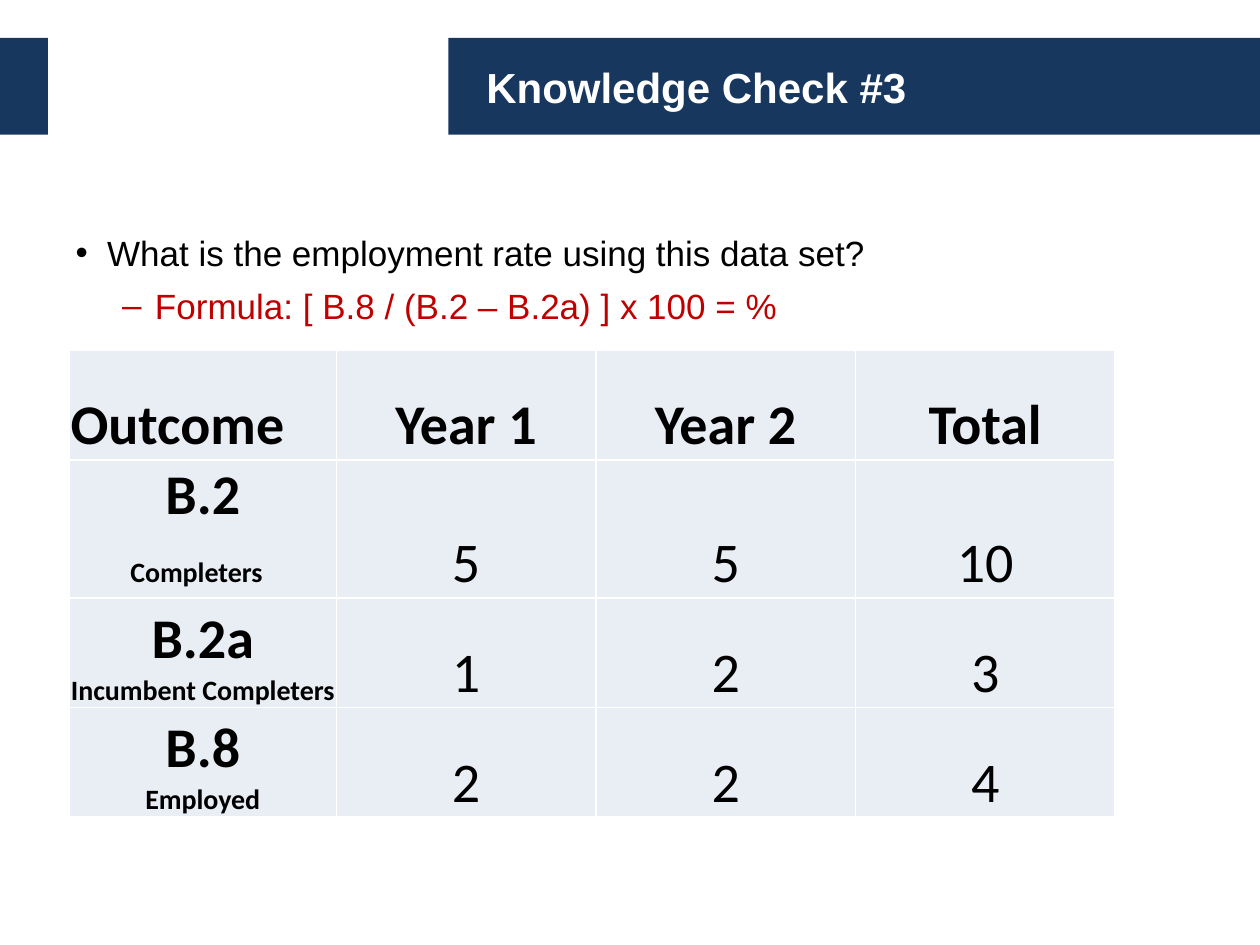
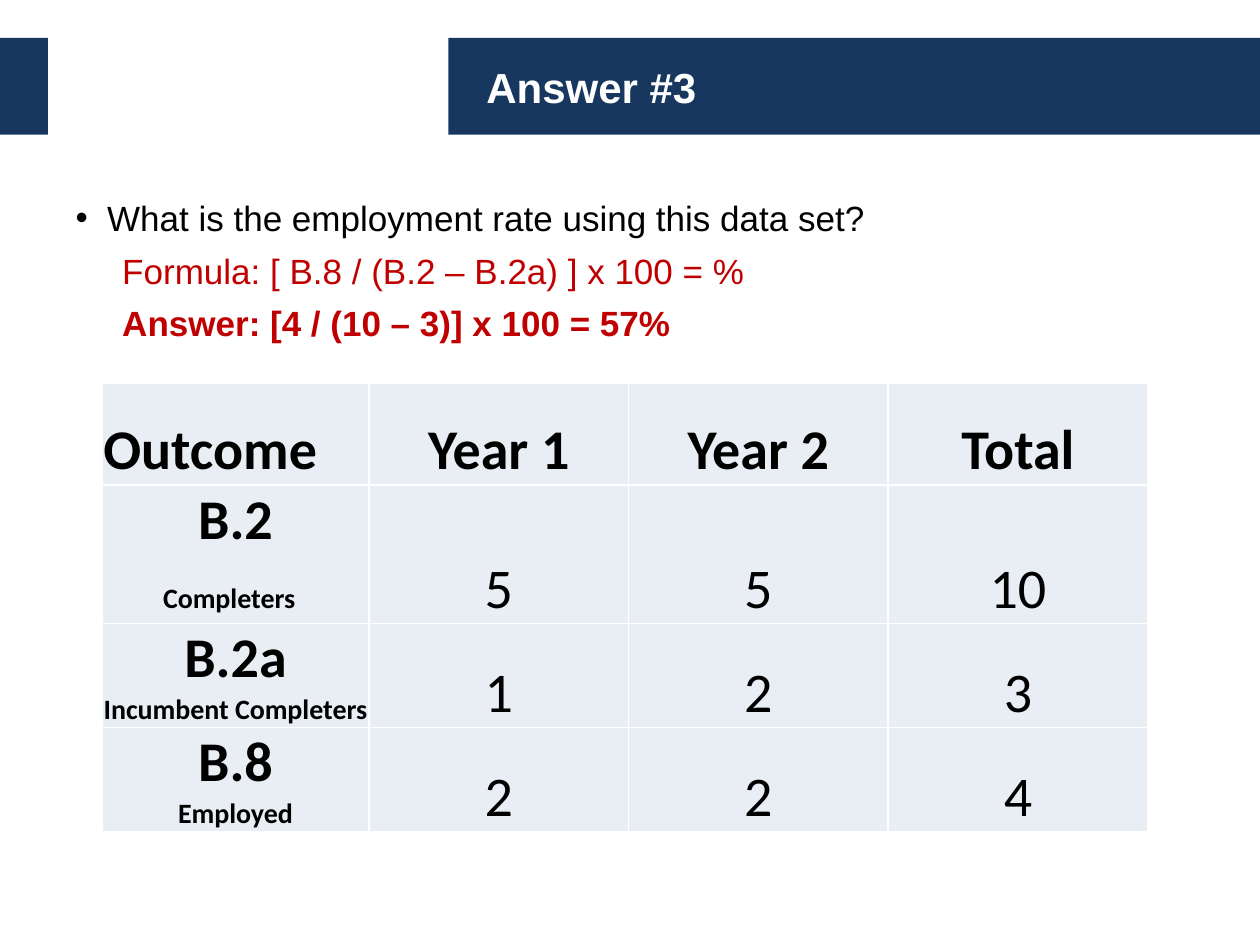
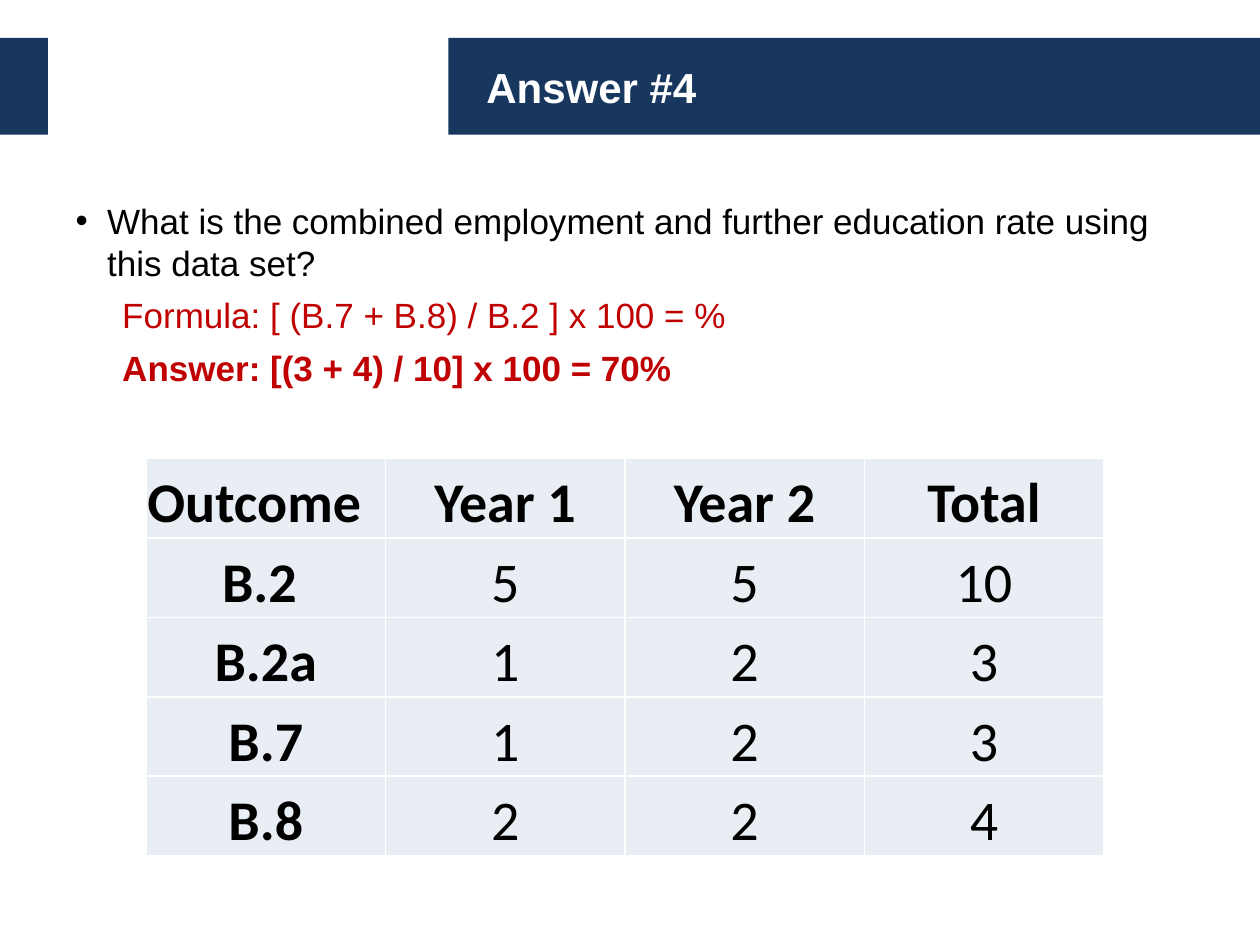
from dataclasses import dataclass

import lxml.etree
import pptx
import pptx.dml.color
import pptx.enum.shapes
import pptx.enum.text
import pptx.oxml.ns
import pptx.util

SCALE = 9144  # EMU per px, 100 px to the inch
HUES = {"navy": "17375E", "white": "FFFFFF", "black": "000000",
        "red": "C00000", "cell": "E9EDF4"}
BANDS = [(356, 644), (0, 38)]  # left, width
BAND_TOP, BAND_HIGH = 30, 77
BODY_END = 670
HEAD = ["Outcome", "Year 1", "Year 2", "Total"]
ALIGN = pptx.enum.text.PP_ALIGN
ANCHOR = pptx.enum.text.MSO_ANCHOR


@dataclass(frozen=True)
class Style:
    """Level, indents, bullet and look of one kind of list line."""
    level: int
    left: int
    hang: int
    mark: str
    hue: str
    bold: bool = False


ASK = Style(0, 25, -25, "•", "black")
DASH = Style(1, 63, -26, "–", "red")
PLAIN = Style(1, 37, 0, "", "red")
REPLY = Style(1, 37, 0, "", "red", True)


@dataclass(frozen=True)
class Row:
    code: str
    nums: list[int]
    note: str = ""
    tail: str = ""  # follows the note at the size of the code


@dataclass(frozen=True)
class Grid:
    left: int
    top: int
    first: int
    other: int
    high: int
    rows: list[Row]


@dataclass(frozen=True)
class Page:
    title: str
    top: int
    lines: list[tuple[Style, str]]
    grid: Grid


NOTED = [
    Row("B.2", [5, 5, 10], "Completers", " "),
    Row("B.2a", [1, 2, 3], "Incumbent Completers"),
    Row("B.8", [2, 2, 4], "Employed"),
]
BARE = [
    Row("B.2 ", [5, 5, 10]),
    Row("B.2a", [1, 2, 3]),
    Row("B.7", [1, 2, 3]),
    Row("B.8", [2, 2, 4]),
]
RATE = "What is the employment rate using this data set?"
RULE = "Formula: [ B.8 / (B.2 – B.2a) ] x 100 = %"
PAGES = [
    Page("Knowledge Check #3", 175, [(ASK, RATE), (DASH, RULE)],
         Grid(55, 278, 212, 206, 87, NOTED)),
    Page("Answer #3", 147,
         [(ASK, RATE), (PLAIN, RULE),
          (REPLY, "Answer: [4 / (10 – 3)] x 100 = 57%")],
         Grid(81, 304, 212, 206, 81, NOTED)),
    Page("Answer #4", 149,
         [(ASK, "What is the combined employment and further education "
                "rate using this data set?"),
          (PLAIN, "Formula: [ (B.7 + B.8) / B.2 ] x 100 = %"),
          (REPLY, "Answer: [(3 + 4) / 10] x 100 = 70%")],
         Grid(116, 364, 190, 190, 63, BARE)),
]


def px(num: int) -> pptx.util.Emu:
    return pptx.util.Emu(num * SCALE)


def tint(name: str) -> pptx.dml.color.RGBColor:
    return pptx.dml.color.RGBColor.from_string(HUES[name])


def add_tag(base, name: str, **attrs: str):
    return lxml.etree.SubElement(base, pptx.oxml.ns.qn(name), attrs)


def set_font(run, face: str, size: int, hue: str, bold: bool) -> None:
    font = run.font
    font.name, font.size, font.bold = face, pptx.util.Pt(size), bold
    font.color.rgb = tint(hue)


def place(shape, left: int, top: int, wide: int, high: int) -> None:
    shape.left, shape.top = px(left), px(top)
    shape.width, shape.height = px(wide), px(high)


def set_bands(slide) -> None:
    """Draw the bands and move them behind everything on the layout."""
    layout = slide.slide_layout
    tree = layout.element.cSld.spTree
    for foot in list(layout.placeholders)[2:]:
        tree.remove(foot.element)
    for left, wide in BANDS:
        band = slide.shapes.add_shape(
            pptx.enum.shapes.MSO_SHAPE.RECTANGLE,
            px(left), px(BAND_TOP), px(wide), px(BAND_HIGH))
        band.shadow.inherit = False
        band.fill.solid()
        band.fill.fore_color.rgb = tint("navy")
        band.line.fill.background()
        tree.insert(2, band.element)


def fill_title(shape, text: str) -> None:
    place(shape, 376, BAND_TOP, 574, BAND_HIGH)
    frame = shape.text_frame
    frame.text = text
    frame.vertical_anchor = ANCHOR.MIDDLE
    para = frame.paragraphs[0]
    para.alignment = ALIGN.LEFT
    set_font(para.runs[0], "Arial", 24, "white", True)


def fill_list(shape, page: Page) -> None:
    place(shape, 50, page.top, 900, BODY_END - page.top)
    frame = shape.text_frame
    frame.text = "\n".join(text for _, text in page.lines)
    frame.auto_size = pptx.enum.text.MSO_AUTO_SIZE.NONE
    frame.margin_top = px(9)
    for pos, (para, (style, _)) in enumerate(zip(frame.paragraphs, page.lines)):
        para.level = style.level
        para.space_before = pptx.util.Pt(3 if pos else 0)
        para.space_after = pptx.util.Pt(3)
        props = para._p.get_or_add_pPr()
        props.set("marL", str(px(style.left)))
        props.set("indent", str(px(style.hang)))
        if style.mark:
            add_tag(props, "a:buChar", char=style.mark)
        else:
            add_tag(props, "a:buNone")
        set_font(para.runs[0], "Arial", 20, style.hue, style.bold)


def set_edges(cell) -> None:
    props = cell._tc.get_or_add_tcPr()
    for pos, side in enumerate("LRTB"):
        edge = add_tag(props, f"a:ln{side}", w=str(pptx.util.Pt(1)))
        add_tag(add_tag(edge, "a:solidFill"), "a:srgbClr", val=HUES["white"])
        props.insert(pos, edge)


def fill_cell(cell, text: str, bold: bool, align, tail: str = "") -> None:
    cell.fill.solid()
    cell.fill.fore_color.rgb = tint("cell")
    set_edges(cell)
    cell.vertical_anchor = ANCHOR.BOTTOM
    cell.margin_left = cell.margin_right = cell.margin_top = px(1)
    cell.margin_bottom = 0
    frame = cell.text_frame
    frame.text = text
    for pos, para in enumerate(frame.paragraphs):
        para.alignment = align
        set_font(para.runs[0], "Calibri", 16 if pos else 32, "black", bold)
    if tail:
        end = frame.paragraphs[-1].add_run()
        end.text = tail
        set_font(end, "Calibri", 32, "black", bold)


def add_grid(slide, grid: Grid) -> None:
    wides = [grid.first] + [grid.other] * (len(HEAD) - 1)
    count = len(grid.rows) + 1
    table = slide.shapes.add_table(
        count, len(HEAD), px(grid.left), px(grid.top),
        px(sum(wides)), px(grid.high * count)).table
    table.first_row = table.horz_banding = False
    for col, wide in zip(table.columns, wides):
        col.width = px(wide)
    for line in table.rows:
        line.height = px(grid.high)
    for pos, text in enumerate(HEAD):
        fill_cell(table.cell(0, pos), text, True,
                  ALIGN.CENTER if pos else ALIGN.LEFT)
    for num, row in enumerate(grid.rows, 1):
        label = f"{row.code}\n{row.note}" if row.note else row.code
        fill_cell(table.cell(num, 0), label, True, ALIGN.CENTER, row.tail)
        for pos, value in enumerate(row.nums, 1):
            fill_cell(table.cell(num, pos), str(value), False, ALIGN.CENTER)


def main() -> None:
    deck = pptx.Presentation()
    deck.slide_width, deck.slide_height = px(1000), px(750)
    layout = deck.slide_layouts[1]
    for num, page in enumerate(PAGES):
        slide = deck.slides.add_slide(layout)
        if num == 0:
            set_bands(slide)
        fill_title(slide.shapes.title, page.title)
        fill_list(slide.placeholders[1], page)
        add_grid(slide, page.grid)
    deck.save("out.pptx")


if __name__ == "__main__":
    main()
